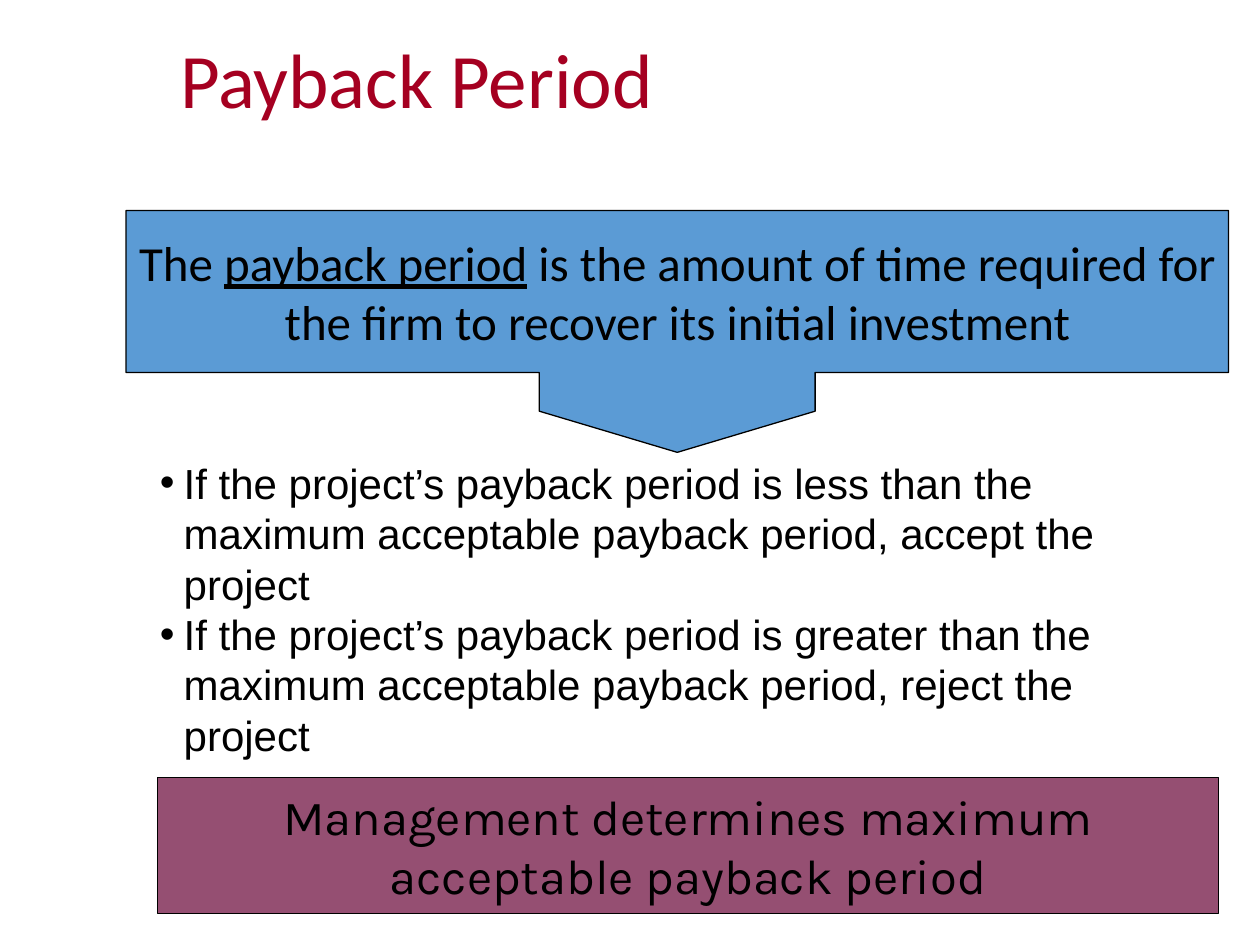
from lxml import etree
from pptx import Presentation
from pptx.dml.color import RGBColor
from pptx.enum.shapes import MSO_SHAPE
from pptx.enum.text import MSO_ANCHOR, MSO_AUTO_SIZE, PP_ALIGN
from pptx.oxml.ns import qn
from pptx.util import Inches, Pt

RECTANGLE = MSO_SHAPE.RECTANGLE
CALLOUT = MSO_SHAPE.DOWN_ARROW_CALLOUT
LEFT, CENTER = PP_ALIGN.LEFT, PP_ALIGN.CENTER
TOP, MIDDLE = MSO_ANCHOR.TOP, MSO_ANCHOR.MIDDLE
NO_AUTOFIT = MSO_AUTO_SIZE.NONE

COLORS = {
    "title": "A50021",
    "text": "000000",
    "definition": "5B9BD5",
    "management": "954F72",
}
FORMATS = {
    "title": {"name": "Calibri", "size": Pt(44), "bold": False},
    "definition": {"name": "Calibri", "size": Pt(28)},
    "rules": {"name": "Arial", "size": Pt(24)},
    "management": {"name": "Karla", "size": Pt(28)},
}


class SlideBuilder:
    def __init__(self, slide):
        self.slide = slide

    def format_font(self, font, style, color="text"):
        for attribute, value in FORMATS[style].items():
            setattr(font, attribute, value)
        font.color.rgb = RGBColor.from_string(COLORS[color])

    def format_frame(self, frame, anchor):
        for attribute, value in {
            "word_wrap": True,
            "auto_size": NO_AUTOFIT,
            "vertical_anchor": anchor,
        }.items():
            setattr(frame, attribute, value)

    def title(self, text, left, top, width, height):
        heading = self.slide.shapes.title
        heading.left, heading.top = Inches(left), Inches(top)
        heading.width, heading.height = Inches(width), Inches(height)
        self.format_frame(heading.text_frame, MIDDLE)
        paragraph = heading.text_frame.paragraphs[0]
        paragraph.alignment = LEFT
        paragraph.line_spacing = 0.9
        run = paragraph.add_run()
        run.text = text
        self.format_font(run.font, "title", "title")

    def panel(self, kind, style, parts, left, top, width, height, adjustments=()):
        panel = self.slide.shapes.add_shape(
            kind, Inches(left), Inches(top), Inches(width), Inches(height)
        )
        for index, value in enumerate(adjustments):
            panel.adjustments[index] = value
        panel.shadow.inherit = False
        panel.fill.solid()
        panel.fill.fore_color.rgb = RGBColor.from_string(COLORS[style])
        panel.line.color.rgb = RGBColor.from_string(COLORS["text"])
        panel.line.width = Pt(0.75)
        self.format_frame(panel.text_frame, MIDDLE)
        paragraph = panel.text_frame.paragraphs[0]
        paragraph.alignment = CENTER
        for text, underlined in parts:
            run = paragraph.add_run()
            run.text = text
            self.format_font(run.font, style)
            run.font.underline = underlined

    def bullets(self, items, left, top, width, height):
        box = self.slide.shapes.add_textbox(
            Inches(left), Inches(top), Inches(width), Inches(height)
        )
        frame = box.text_frame
        self.format_frame(frame, TOP)
        for index, item in enumerate(items):
            paragraph = frame.add_paragraph() if index else frame.paragraphs[0]
            properties = paragraph._p.get_or_add_pPr()
            properties.set("marL", str(Inches(0.19)))
            properties.set("indent", str(-Inches(0.19)))
            etree.SubElement(properties, qn("a:buFont")).set("typeface", "Arial")
            etree.SubElement(properties, qn("a:buChar")).set("char", "•")
            run = paragraph.add_run()
            run.text = item
            self.format_font(run.font, "rules")


def main():
    presentation = Presentation()
    presentation.slide_width = Inches(10)
    presentation.slide_height = Inches(7.5)
    title_only = presentation.slide_layouts[5]
    builder = SlideBuilder(presentation.slides.add_slide(title_only))

    builder.title("Payback Period", 1.33, 0.16, 8.12, 1)
    builder.panel(
        RECTANGLE,
        "management",
        [("Management determines maximum acceptable payback period", False)],
        1.25, 6.17, 8.42, 1.08,
    )
    definition = [
        ("The ", False),
        ("payback period", True),
        (" is the amount of time required for the firm to recover "
         "its initial investment", False),
    ]
    builder.panel(
        CALLOUT, "definition", definition, 1, 1.67, 8.75, 1.92,
        adjustments=(1.14, 0.57, 0.17, 0.67),
    )
    decisions = [("less", "accept"), ("greater", "reject")]
    builder.bullets(
        [
            f"If the project’s payback period is {comparison} than the maximum "
            f"acceptable payback period, {decision} the project"
            for comparison, decision in decisions
        ],
        1.17, 3.58, 8.17, 2.5,
    )
    presentation.save("out.pptx")


if __name__ == "__main__":
    main()
